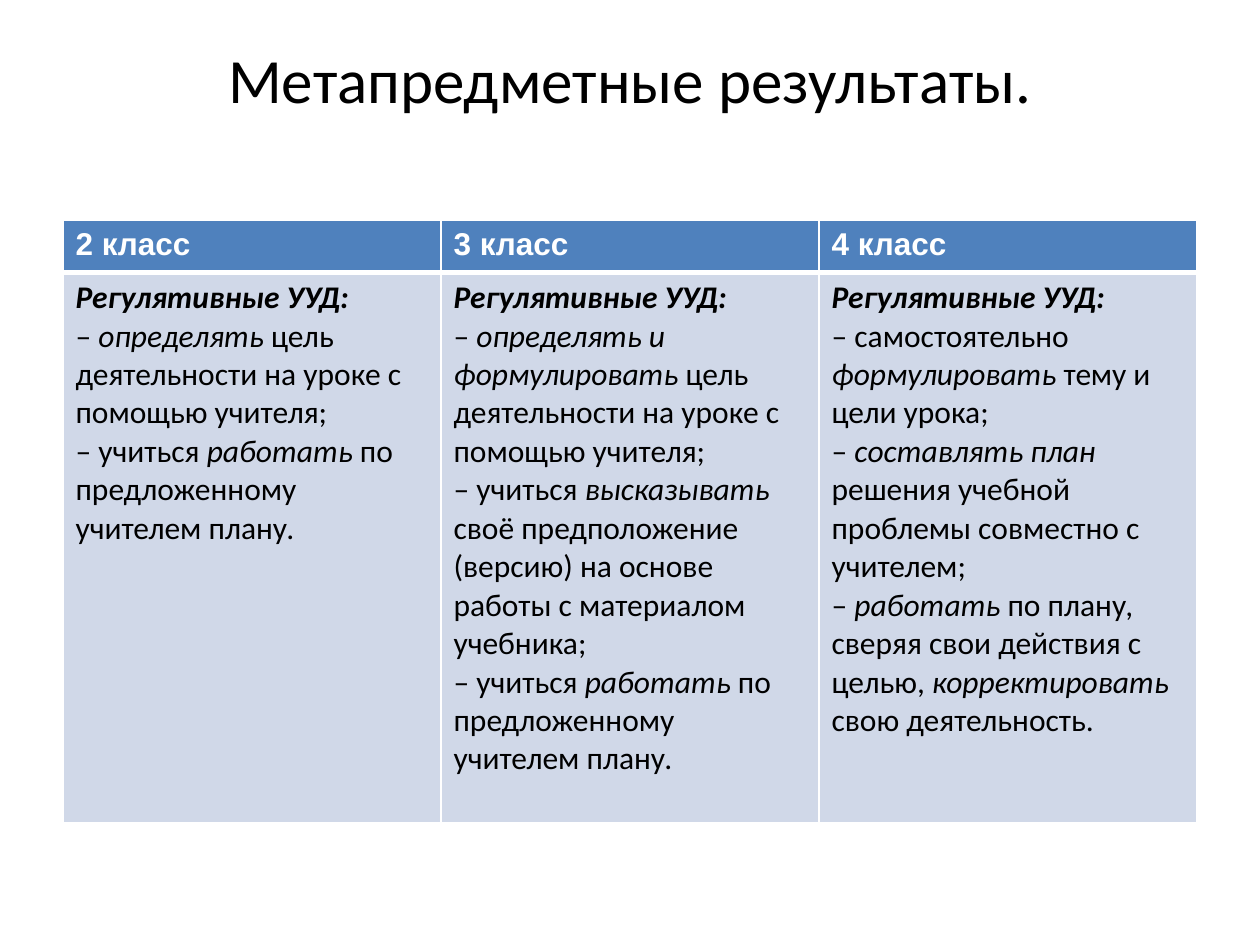
from dataclasses import dataclass

from lxml import etree
from pptx import Presentation
from pptx.dml.color import RGBColor
from pptx.enum.text import MSO_ANCHOR, MSO_AUTO_SIZE, PP_ALIGN
from pptx.oxml.ns import qn
from pptx.util import Cm, Pt

MIDDLE = MSO_ANCHOR.MIDDLE
NO_FIT = MSO_AUTO_SIZE.NONE
CENTER = PP_ALIGN.CENTER

COLORS = {"text": "000000", "header": "4F81BD", "body": "D0D8E8", "white": "FFFFFF"}
TITLE_PT = 36
HEADING = "Регулятивные УУД:"


@dataclass(frozen=True)
class Grade:
    name: str
    skills: tuple[str, ...]


# Asterisks enclose the italic words of a skill.
GRADES = [
    Grade("2 класс", (
        "– *определять *цель деятельности на уроке с помощью учителя;",
        "– учиться *работать *по предложенному учителем плану.",
    )),
    Grade("3 класс", (
        "– *определять и формулировать *цель деятельности на уроке с помощью учителя;",
        "– учиться *высказывать *своё предположение (версию) на основе работы "
        "с материалом учебника;",
        "– учиться *работать *по предложенному учителем плану.",
    )),
    Grade("4 класс", (
        "– самостоятельно *формулировать *тему и цели урока;",
        "– *составлять план *решения учебной проблемы совместно с учителем;",
        "– *работать *по плану, сверяя свои действия с целью, "
        "*корректировать *свою деятельность.",
    )),
]


def rgb(name: str) -> RGBColor:
    return RGBColor.from_string(COLORS[name])


def style_run(r, size: float, font: str, color: str, bold=False, italic=False) -> None:
    r.font.size = Pt(size)
    r.font.name = font
    r.font.color.rgb = rgb(color)
    r.font.bold = bold
    r.font.italic = italic


def style_cell(cell, fill: str, top: float, bottom: float) -> None:
    cell.fill.solid()
    cell.fill.fore_color.rgb = rgb(fill)
    tc_pr = cell._tc.get_or_add_tcPr()
    widths = {"a:lnL": 1, "a:lnR": 1, "a:lnT": top, "a:lnB": bottom}
    for i, (tag, width) in enumerate(widths.items()):
        ln = etree.Element(qn(tag), w=str(Pt(width)))
        solid = etree.SubElement(ln, qn("a:solidFill"))
        etree.SubElement(solid, qn("a:srgbClr"), val=COLORS["white"])
        tc_pr.insert(i, ln)


def fill_title(sp) -> None:
    sp.left, sp.top, sp.width, sp.height = Cm(1.27), Cm(0.76), Cm(22.86), Cm(3.18)
    tf = sp.text_frame
    tf.text = "Метапредметные результаты.\v"
    tf.auto_size = NO_FIT
    tf.vertical_anchor = MIDDLE
    p = tf.paragraphs[0]
    p.alignment = CENTER
    style_run(p.runs[0], TITLE_PT, "Calibri", "text")
    etree.SubElement(p._p, qn("a:endParaRPr"), sz=str(TITLE_PT * 100))


def fill_header(cell, name: str) -> None:
    cell.text_frame.text = name
    style_run(cell.text_frame.paragraphs[0].runs[0], 18, "Arial", "white", bold=True)
    style_cell(cell, "header", 1, 3)


def fill_body(cell, skills: tuple[str, ...]) -> None:
    tf = cell.text_frame
    tf.text = HEADING
    style_run(tf.paragraphs[0].runs[0], 18, "Calibri", "text", bold=True, italic=True)
    for skill in skills:
        p = tf.add_paragraph()
        for i, part in enumerate(skill.split("*")):
            r = p.add_run()
            r.text = part
            style_run(r, 18, "Calibri", "text", italic=i % 2 == 1)
    style_cell(cell, "body", 3, 1)


def main() -> None:
    prs = Presentation()
    prs.slide_width, prs.slide_height = Cm(25.4), Cm(19.05)
    s = prs.slides.add_slide(prs.slide_layouts[5])
    fill_title(s.shapes.title)

    frame = s.shapes.add_table(2, len(GRADES), Cm(1.27), Cm(4.45), Cm(22.86), Cm(12.14))
    table = frame.table
    table.horz_banding = False
    table.rows[0].height = Cm(1.04)
    table.rows[1].height = Cm(11.1)
    for col, grade in enumerate(GRADES):
        fill_header(table.cell(0, col), grade.name)
        fill_body(table.cell(1, col), grade.skills)

    prs.save("out.pptx")


if __name__ == "__main__":
    main()
